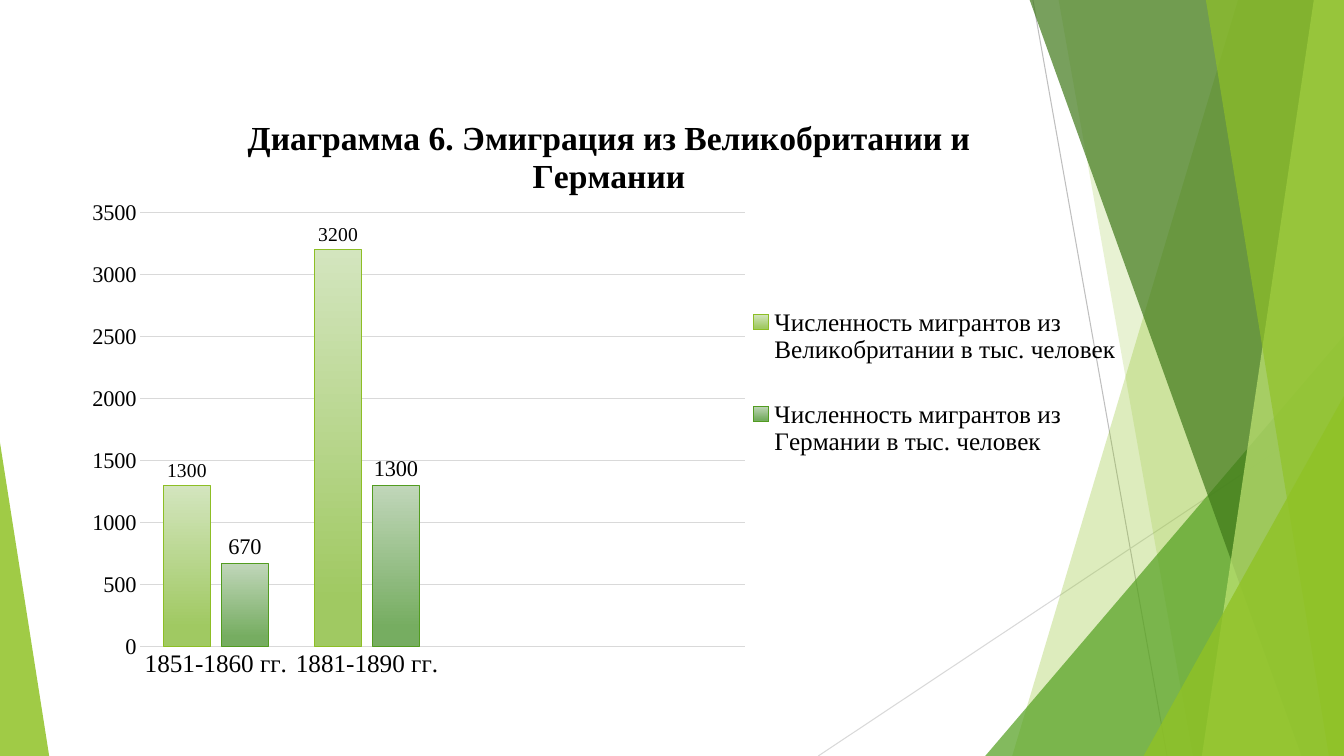
from dataclasses import dataclass

from lxml import etree
from pptx import Presentation
from pptx.chart.data import CategoryChartData
from pptx.dml.color import RGBColor
from pptx.enum.chart import XL_CHART_TYPE, XL_LABEL_POSITION, XL_LEGEND_POSITION, XL_TICK_MARK
from pptx.enum.shapes import MSO_CONNECTOR, MSO_SHAPE
from pptx.oxml import parse_xml
from pptx.oxml.ns import qn
from pptx.util import Cm, Pt

COLUMNS = XL_CHART_TYPE.COLUMN_CLUSTERED
OUTSIDE_END = XL_LABEL_POSITION.OUTSIDE_END
LEGEND_BOTTOM = XL_LEGEND_POSITION.BOTTOM
NO_TICK = XL_TICK_MARK.NONE
STRAIGHT = MSO_CONNECTOR.STRAIGHT
TRIANGLE = MSO_SHAPE.ISOSCELES_TRIANGLE
CHART_NS = "http://schemas.openxmlformats.org/drawingml/2006/chart"
DRAWING_NS = "http://schemas.openxmlformats.org/drawingml/2006/main"


@dataclass(frozen=True)
class Theme:
    font: str = "Times New Roman"
    text: str = "000000"
    grid: str = "D9D9D9"
    steep_line: str = "BFBFBF"
    lime: str = "90C226"
    green: str = "54A021"
    forest: str = "3F7819"
    pale: str = "C0E474"
    title_size: int = 24
    large_size: int = 18
    axis_size: int = 16
    small_size: int = 14
    thin: float = 0.75


@dataclass(frozen=True)
class Box:
    left: float
    top: float
    width: float
    height: float

    @property
    def right(self):
        return self.left + self.width

    @property
    def bottom(self):
        return self.top + self.height


THEME = Theme()
PAGE = Box(0, 0, 33.87, 19.05)
FOLIAGE = Box(20.62, 0, 13.25, 19.05)
CHART = Box(2.06, 2.13, 26.87, 16.33)
TITLE = "Диаграмма 6. Эмиграция из Великобритании и Германии"
PERIODS = ("1851-1860 гг.", "1881-1890 гг.", "", "")
SERIES = (
    ("Численность мигрантов из Великобритании в тыс. человек", (1300, 3200, None, None),
     ("D3E5BE", "A0C962"), "8DBE25", THEME.small_size),
    ("Численность мигрантов из Германии в тыс. человек", (670, 1300, None, None),
     ("C0D6B9", "76AD61"), "529C20", THEME.axis_size),
)


def colour(value):
    return RGBColor.from_string(value)


def style_font(font, size, bold=False):
    font.name = THEME.font
    font.size = Pt(size)
    font.bold = bold
    font.color.rgb = colour(THEME.text)


def style_line(line, value):
    line.color.rgb = colour(value)
    line.width = Pt(THEME.thin)


def paint(shape, value, opacity):
    shape.shadow.inherit = False
    shape.line.fill.background()
    shape.fill.solid()
    shape.fill.fore_color.rgb = colour(value)
    tint = shape.fill._xPr.find(".//" + qn("a:srgbClr"))
    etree.SubElement(tint, qn("a:alpha")).set("val", str(opacity * 1000))


def add_ray(page, start, end, value):
    ray = page.shapes.add_connector(STRAIGHT, *(Cm(length) for length in start + end))
    style_line(ray.line, value)
    etree.SubElement(ray._element.spPr, qn("a:effectLst"))


def add_shard(page, box, top_inset, bottom_inset, value, opacity):
    outline = page.shapes.build_freeform(Cm(box.right - top_inset), Cm(box.top))
    outline.add_line_segments([
        (Cm(box.right), Cm(box.top)),
        (Cm(box.right), Cm(box.bottom)),
        (Cm(box.right - bottom_inset), Cm(box.bottom)),
    ])
    paint(outline.convert_to_shape(), value, opacity)


def add_wedge(page, box, peak, value, opacity):
    wedge = page.shapes.add_shape(
        TRIANGLE, Cm(box.left), Cm(box.top), Cm(box.width), Cm(box.height))
    wedge.adjustments[0] = peak
    paint(wedge, value, opacity)


def add_right_wedge(page, box, width, height, value, opacity):
    corner = Box(box.right - width, box.bottom - height, width, height)
    add_wedge(page, corner, 1, value, opacity)


def add_foliage(page, box):
    add_ray(page, (box.left + 5.41, box.top), (box.left + 8.79, box.bottom), THEME.steep_line)
    add_ray(page, (box.right, box.top + 10.24), (box.left, box.bottom), THEME.grid)
    for add_part, first, second, value, opacity in (
        (add_shard, 2.67, 8.36, THEME.lime, 30),
        (add_shard, 7.19, 3.81, THEME.lime, 20),
        (add_right_wedge, 9.04, 10.59, THEME.green, 72),
        (add_shard, 7.92, 1.07, THEME.forest, 70),
        (add_shard, 0.76, 3.58, THEME.pale, 70),
        (add_shard, 3.48, 0.38, THEME.lime, 65),
        (add_right_wedge, 5.05, 9.07, THEME.lime, 80),
    ):
        add_part(page, box, first, second, value, opacity)


def add_left_leaf(page, box):
    leaf = Box(box.left, box.bottom - 7.9, 1.24, 7.9)
    add_wedge(page, leaf, 0, THEME.lime, 85)


def set_layout(parent, index, **places):
    for old in parent.findall(qn("c:layout")):
        parent.remove(old)
    layout = etree.Element(qn("c:layout"))
    manual = etree.SubElement(layout, qn("c:manualLayout"))
    for tag, value in places.items():
        etree.SubElement(manual, qn("c:" + tag)).set("val", str(value))
    parent.insert(index, layout)


def clear_fill():
    return parse_xml(
        f'<c:spPr xmlns:c="{CHART_NS}" xmlns:a="{DRAWING_NS}">'
        "<a:noFill/><a:ln><a:noFill/></a:ln></c:spPr>")


def style_axes(chart):
    for axis, size in ((chart.category_axis, THEME.large_size),
                       (chart.value_axis, THEME.axis_size)):
        axis.major_tick_mark = axis.minor_tick_mark = NO_TICK
        style_font(axis.tick_labels.font, size)
    style_line(chart.category_axis.format.line, THEME.grid)
    values = chart.value_axis
    values.minimum_scale, values.maximum_scale, values.major_unit = 0, 3500, 500
    values.format.line.fill.background()
    style_line(values.major_gridlines.format.line, THEME.grid)


def style_series(series, shades, edge, label_size):
    fill = series.format.fill
    fill.gradient()
    fill.gradient_angle = 270
    for stop, shade, position in zip(fill.gradient_stops, shades, (0, 0.88)):
        stop.color.rgb = colour(shade)
        stop.position = position
    style_line(series.format.line, edge)
    labels = series.data_labels
    labels.show_value = True
    labels.position = OUTSIDE_END
    style_font(labels.font, label_size)


def add_emigration_chart(page, box):
    figures = CategoryChartData()
    figures.categories = PERIODS
    for name, values, *_ in SERIES:
        figures.add_series(name, values)
    chart = page.shapes.add_chart(
        COLUMNS, Cm(box.left), Cm(box.top), Cm(box.width), Cm(box.height), figures).chart
    style_font(chart.font, 10)
    chart.has_title = True
    chart.chart_title.text_frame.text = TITLE
    for span in chart.chart_title.text_frame.paragraphs[0].runs:
        style_font(span.font, THEME.title_size, True)
    chart.has_legend = True
    chart.legend.position = LEGEND_BOTTOM
    chart.legend.include_in_layout = False
    style_font(chart.legend.font, THEME.large_size)
    style_axes(chart)
    plot = chart.plots[0]
    plot.gap_width, plot.overlap, plot.vary_by_categories = 100, -24, False
    for series, (_, _, shades, edge, label_size) in zip(plot.series, SERIES):
        style_series(series, shades, edge, label_size)
    body = chart._chartSpace.chart
    area = body.plotArea
    set_layout(chart.chart_title._element, 1, xMode="edge", yMode="edge", x=0.15, y=0.04)
    set_layout(chart.legend._element, 1, xMode="edge", yMode="edge",
               x=0.62, y=0.29, w=0.36, h=0.34)
    set_layout(area, 0, layoutTarget="inner", xMode="edge", yMode="edge",
               x=0.055, y=0.198, w=0.567, h=0.67)
    area.append(clear_fill())
    body.addnext(clear_fill())


def main():
    deck = Presentation()
    deck.slide_width, deck.slide_height = Cm(PAGE.width), Cm(PAGE.height)
    page = deck.slides.add_slide(deck.slide_layouts[6])
    add_foliage(page, FOLIAGE)
    add_left_leaf(page, PAGE)
    add_emigration_chart(page, CHART)
    deck.save("out.pptx")


if __name__ == "__main__":
    main()
